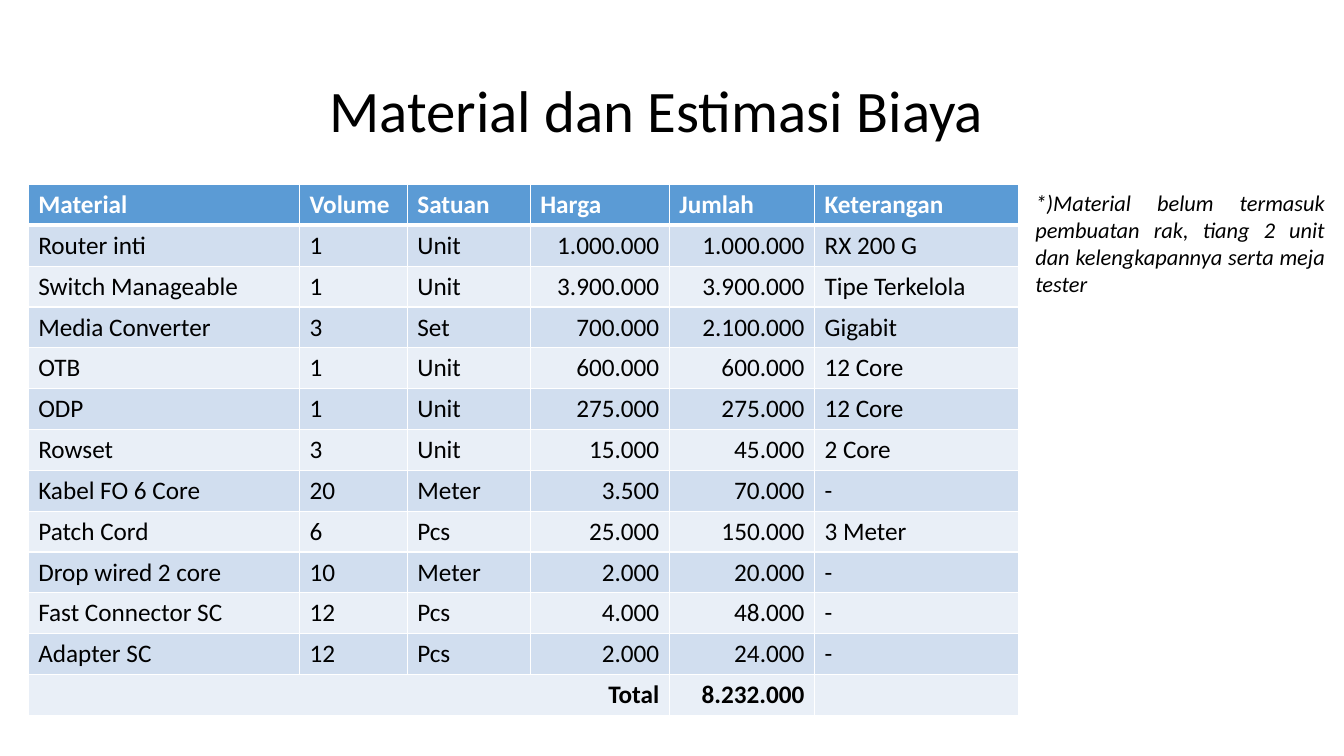
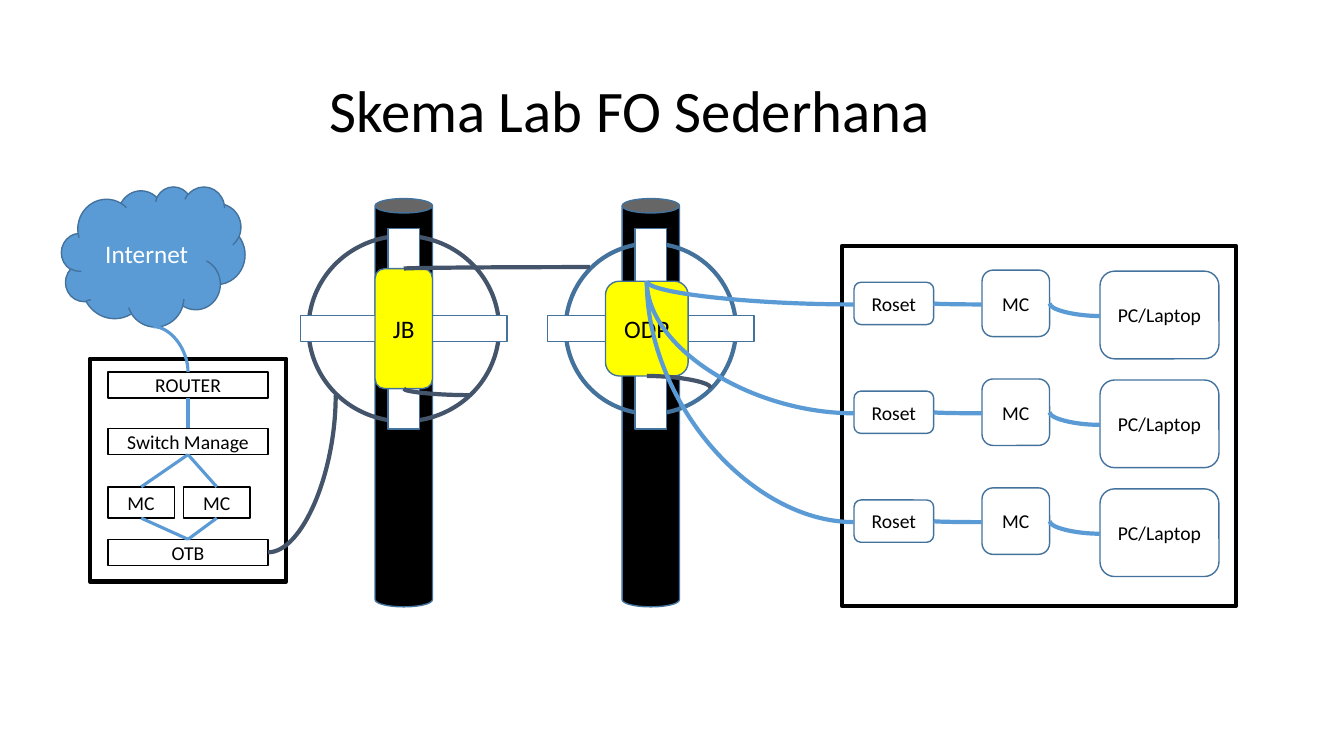
from dataclasses import dataclass

from lxml import etree
from pptx import Presentation
from pptx import util as u
from pptx.dml.color import RGBColor
from pptx.enum import shapes, text
from pptx.oxml.ns import qn

SHAPE = shapes.MSO_SHAPE
ALIGN = text.PP_ALIGN


@dataclass(frozen=True)
class Theme:
    font: str = "Calibri"
    black: str = "000000"
    white: str = "FFFFFF"
    blue: str = "5B9BD5"
    edge: str = "43729D"
    slate: str = "44546A"
    yellow: str = "FFFF00"
    bands: tuple = ("E9EFF7", "D1DEEF")
    title: int = 42
    body: int = 18
    note: int = 16
    device: int = 14
    thin: float = 1
    wire: float = 2.25
    thick: float = 3


THEME = Theme()

HEADINGS = ("Material", "Volume", "Satuan", "Harga", "Jumlah", "Keterangan")
MATERIALS = (
    ("Router inti", "1", "Unit", "1.000.000", "1.000.000", "RX 200 G"),
    ("Switch Manageable", "1", "Unit", "3.900.000", "3.900.000", "Tipe Terkelola"),
    ("Media Converter", "3", "Set", "700.000", "2.100.000", "Gigabit"),
    ("OTB", "1", "Unit", "600.000", "600.000", "12 Core"),
    ("ODP", "1", "Unit", "275.000", "275.000", "12 Core"),
    ("Rowset", "3", "Unit", "15.000", "45.000", "2 Core"),
    ("Kabel FO 6 Core", "20", "Meter", "3.500", "70.000", "-"),
    ("Patch Cord", "6", "Pcs", "25.000", "150.000", "3 Meter"),
    ("Drop wired 2 core", "10", "Meter", "2.000", "20.000", "-"),
    ("Fast Connector SC", "12", "Pcs", "4.000", "48.000", "-"),
    ("Adapter SC", "12", "Pcs", "2.000", "24.000", "-"),
)
TOTAL = ("Total", "", "", "", "8.232.000", "")
COLUMN_WIDTHS = (2.69, 1.07, 1.22, 1.38, 1.44, 2.02)
PRICE_COLUMNS = (3, 4)


def inches(*lengths):
    return [u.Inches(length) for length in lengths]


def write(frame, wording, size, color=THEME.black, align=ALIGN.LEFT, **extra):
    paragraph = frame.paragraphs[0]
    paragraph.alignment = align
    run = paragraph.add_run()
    run.text = wording
    run.font.color.rgb = RGBColor.from_string(color)
    formats = {"name": THEME.font, "size": u.Pt(size), **extra}
    for name, value in formats.items():
        setattr(run.font, name, value)
    return paragraph


def add_textbox(slide, box, anchor):
    frame = slide.shapes.add_textbox(*inches(*box)).text_frame
    for name, value in {"word_wrap": True, "vertical_anchor": anchor}.items():
        setattr(frame, name, value)
    return frame


def add_title(slide, wording):
    frame = add_textbox(slide, (3.17, 0.4, 9.87, 1.45), text.MSO_ANCHOR.MIDDLE)
    write(frame, wording, THEME.title).line_spacing = 0.9


def add_part(slide, kind, box, fill=None, line=THEME.edge, width=THEME.thin,
             adjust=None, label=None, size=THEME.device, color=THEME.black):
    part = slide.shapes.add_shape(kind, *inches(*box))
    part.shadow.inherit = False
    if fill:
        part.fill.solid()
        part.fill.fore_color.rgb = RGBColor.from_string(fill)
    else:
        part.fill.background()
    part.line.color.rgb = RGBColor.from_string(line)
    part.line.width = u.Pt(width)
    if adjust is not None:
        part.adjustments[0] = adjust
    if label:
        write(part.text_frame, label, size, color, ALIGN.CENTER)


def add_wire(slide, start, end, color=THEME.blue, width=THEME.wire):
    wire = slide.shapes.add_connector(
        shapes.MSO_CONNECTOR.STRAIGHT, *inches(*start, *end))
    wire.line.color.rgb = RGBColor.from_string(color)
    wire.line.width = u.Pt(width)
    etree.SubElement(wire._element.spPr, qn("a:effectLst"))
    return wire


def add_cable(slide, start, end, color=THEME.blue, width=THEME.thick):
    properties = add_wire(slide, start, end, color, width)._element.spPr
    properties.find(qn("a:prstGeom")).set("prst", "curvedConnector2")
    if end[0] < start[0]:
        placement = properties.find(qn("a:xfrm"))
        placement.attrib.pop("flipH", None)
        placement.set("rot", "10800000")
        if placement.attrib.pop("flipV", None) is None:
            placement.set("flipV", "1")


def set_borders(cell, top, bottom):
    properties = cell._tc.get_or_add_tcPr()
    widths = {"lnL": THEME.thin, "lnR": THEME.thin, "lnT": top, "lnB": bottom}
    for side, width in widths.items():
        border = etree.SubElement(properties, qn(f"a:{side}"), w=str(u.Pt(width)))
        fill = etree.SubElement(border, qn("a:solidFill"))
        etree.SubElement(fill, qn("a:srgbClr"), val=THEME.white)


def add_cost_table(slide, box):
    rows = (HEADINGS, *MATERIALS, TOTAL)
    last = len(rows) - 1
    table = slide.shapes.add_table(len(rows), len(HEADINGS), *inches(*box)).table
    table.horz_banding = False
    for column, width in zip(table.columns, COLUMN_WIDTHS):
        column.width = u.Inches(width)
    for r, row in enumerate(rows):
        table.rows[r].height = u.Inches(box[3] / len(rows))
        for c, wording in enumerate(row):
            cell = table.cell(r, c)
            set_borders(cell, THEME.thick if r == 1 else THEME.thin,
                        THEME.thick if r == 0 else THEME.thin)
            cell.fill.solid()
            cell.fill.fore_color.rgb = RGBColor.from_string(
                THEME.bands[r % 2] if r else THEME.blue)
            if wording:
                to_right = r == last or (r and c in PRICE_COLUMNS)
                write(cell.text_frame, wording, THEME.body,
                      THEME.black if r else THEME.white,
                      ALIGN.RIGHT if to_right else ALIGN.LEFT,
                      bold=r in (0, last))
    table.cell(last, 0).merge(table.cell(last, 3))


def add_rack(slide, box):
    left, top, _, _ = box
    add_part(slide, SHAPE.RECTANGLE, box, line=THEME.black, width=THEME.thick)
    unit_left, unit_width, unit_height = left + 0.18, 1.59, 0.26
    router, switch, otb = top + 0.13, top + 0.69, top + 1.79
    for label, unit_top in (("ROUTER", router), ("Switch Manage", switch), ("OTB", otb)):
        add_part(slide, SHAPE.RECTANGLE, (unit_left, unit_top, unit_width, unit_height),
                 line=THEME.black, label=label)
    middle = unit_left + unit_width / 2
    add_wire(slide, (middle, router + unit_height), (middle, switch))
    mc_top, mc_width, mc_height = top + 1.27, 0.66, 0.31
    for mc_left in (unit_left, unit_left + 0.75):
        add_part(slide, SHAPE.RECTANGLE, (mc_left, mc_top, mc_width, mc_height),
                 line=THEME.black, label="MC")
        mc_middle = mc_left + mc_width / 2
        add_wire(slide, (middle, switch + unit_height), (mc_middle, mc_top))
        add_wire(slide, (mc_middle, mc_top + mc_height), (middle, otb))
    return (middle, router), (unit_left + unit_width, otb + unit_height / 2)


def add_pole(slide, box, label, ring, ring_color, closure, shift=0):
    left, top, width, _ = box
    center, clamp = left + width / 2, top + 1.29

    def around(size, offset=0):
        return center + offset - size[0] / 2, clamp - size[1] / 2, *size

    add_part(slide, SHAPE.CAN, box, THEME.black, adjust=0.25)
    add_part(slide, SHAPE.OVAL, around(ring), line=ring_color, width=THEME.thick)
    add_part(slide, SHAPE.CROSS, around((2.05, 1.99)), THEME.white, adjust=0.436)
    add_part(slide, SHAPE.ROUNDED_RECTANGLE, around(closure, shift), THEME.yellow,
             label=label, size=THEME.body)
    half = closure[1] / 2
    return (center + shift, clamp - half), (center + shift, clamp + half)


def add_lab(slide, box, source):
    left, top, _, _ = box
    add_part(slide, SHAPE.RECTANGLE, box, line=THEME.black, width=THEME.thick)
    devices = (
        ("Roset", 0.12, 0.36, 0.79, 0.42),
        ("MC", 1.39, 0.24, 0.67, 0.66),
        ("PC/Laptop", 2.56, 0.25, 1.18, 0.87),
    )
    for station in range(3):
        station_top = top + 1.08 * station
        outlet = source
        for label, x, y, width, height in devices:
            device_left, device_top = left + x, station_top + y
            middle = device_top + height / 2
            add_part(slide, SHAPE.ROUNDED_RECTANGLE,
                     (device_left, device_top, width, height), THEME.white, label=label)
            add_cable(slide, (device_left, middle + 0.01), outlet)
            outlet = device_left + width, middle


def build_cost_slide(slide):
    add_title(slide, "Material dan Estimasi Biaya")
    add_cost_table(slide, (0.28, 1.83, 9.82, 5.27))
    note = add_textbox(slide, (10.17, 1.83, 3.07, 1.16), text.MSO_ANCHOR.TOP)
    write(note, "*)Material belum termasuk pembuatan rak, tiang 2 unit dan "
          "kelengkapannya serta meja tester", THEME.note,
          align=ALIGN.JUSTIFY, italic=True)


def build_scheme_slide(slide):
    add_title(slide, "Skema Lab FO Sederhana")
    router, otb = add_rack(slide, (0.89, 3.56, 1.95, 2.21))
    odp_top, odp_bottom = add_pole(slide, (6.17, 1.97, 0.57, 4.05), "ODP",
                                   (1.69, 1.69), THEME.edge, (0.82, 0.94), -0.04)
    jb_top, jb_bottom = add_pole(slide, (3.72, 1.97, 0.57, 4.05), "JB",
                                 (1.89, 1.84), THEME.slate, (0.57, 1.19))
    add_part(slide, SHAPE.CLOUD, (0.61, 1.85, 1.82, 1.39), THEME.blue,
             label="Internet", size=THEME.body, color=THEME.white)
    add_cable(slide, (1.52, 3.24), router, width=THEME.wire)
    for start, end in (
        (otb, (3.33, 3.92)),
        ((4.66, 3.92), jb_bottom),
        ((5.85, 2.65), jb_top),
        (odp_bottom, (7.05, 3.85)),
    ):
        add_cable(slide, start, end, THEME.slate)
    add_lab(slide, (8.35, 2.44, 3.91, 3.57), odp_top)


def main():
    deck = Presentation()
    deck.slide_width, deck.slide_height = inches(13.33, 7.5)
    for build in (build_cost_slide, build_scheme_slide):
        build(deck.slides.add_slide(deck.slide_layouts[6]))
    deck.save("out.pptx")


if __name__ == "__main__":
    main()
